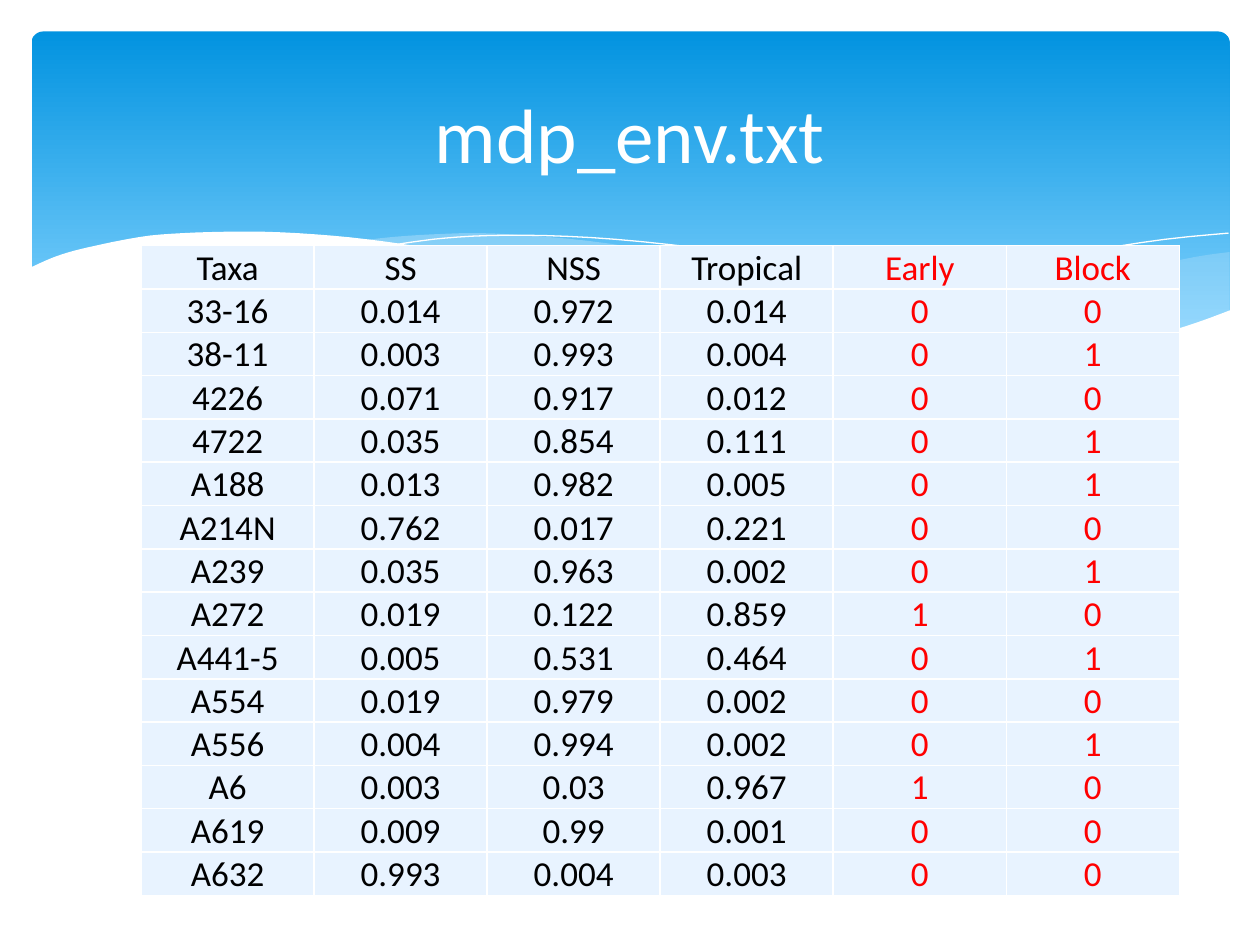
from collections import namedtuple

from lxml.etree import SubElement
from pptx import Presentation
from pptx.dml.color import RGBColor
from pptx.enum.shapes import MSO_SHAPE
from pptx.enum.text import MSO_ANCHOR, PP_ALIGN
from pptx.oxml.ns import qn
from pptx.util import Inches, Pt

Box = namedtuple("Box", "left top width height")
COLORS = {
    "white": "FFFFFF", "black": "000000", "red": "FF0000", "cell": "E8F3FF",
    "banner_top": "0293E0", "banner_bottom": "83D3FE", "wave": "C6E7FC",
}
FONT = "Calibri"
GRID_COLUMNS, GRID_ROWS = 1000, 750

RIGHT_WAVE = [
    [(976, 200), (948, 204), (906, 213), (861, 223), (805, 237), (753, 248), (706, 257), (661, 265)],
    [(661, 265), (705, 271), (757, 275), (803, 278), (854, 276), (897, 270), (935, 262), (976, 247)],
]
MIDDLE_WAVE = [
    [(893, 273), (837, 265), (775, 254), (706, 240), (629, 222), (569, 208), (514, 198),
     (465, 191), (420, 187), (380, 185), (344, 186), (313, 188), (286, 191)],
    [(286, 191), (342, 199), (404, 211), (449, 222), (530, 240), (601, 255), (665, 266),
     (722, 274), (773, 277), (818, 278), (857, 277), (893, 273)],
]
LONG_CREST = [[
    (309, 195), (328, 192), (353, 189), (387, 187), (433, 187), (489, 190), (556, 197),
    (636, 208), (727, 226), (831, 251), (907, 272),
]]
RIGHT_CREST = [[
    (613, 257), (672, 241), (748, 223), (806, 210), (866, 199), (924, 190), (975, 185),
]]
WHITE_WAVE = [
    [(977, 246), (950, 256), (920, 265), (887, 271), (850, 275), (809, 277), (761, 275),
     (708, 270), (648, 262), (579, 250), (503, 233), (447, 220), (391, 207), (340, 197),
     (292, 190), (250, 186), (211, 184), (177, 184), (146, 185), (119, 187), (95, 191),
     (76, 195), (59, 199), (46, 203), (36, 207), (23, 213)],
    [(23, 329), (977, 329)],
]

HEADERS = ["Taxa", "SS", "NSS", "Tropical", "Early", "Block"]
COVARIATES = {"Early", "Block"}
RECORDS = """
33-16 0.014 0.972 0.014 0 0
38-11 0.003 0.993 0.004 0 1
4226 0.071 0.917 0.012 0 0
4722 0.035 0.854 0.111 0 1
A188 0.013 0.982 0.005 0 1
A214N 0.762 0.017 0.221 0 0
A239 0.035 0.963 0.002 0 1
A272 0.019 0.122 0.859 1 0
A441-5 0.005 0.531 0.464 0 1
A554 0.019 0.979 0.002 0 0
A556 0.004 0.994 0.002 0 1
A6 0.003 0.03 0.967 1 0
A619 0.009 0.99 0.001 0 0
A632 0.993 0.004 0.003 0 0
"""


def color(name):
    return RGBColor.from_string(COLORS[name])


def cells_of(box, column, row, columns, rows):
    unit_x, unit_y = box.width / GRID_COLUMNS, box.height / GRID_ROWS
    return Box(round(box.left + column * unit_x), round(box.top + row * unit_y),
               round(columns * unit_x), round(rows * unit_y))


def smooth(points, steps=3):
    if len(points) < 3:
        return points
    padded = [points[0], *points, points[-1]]
    curve = []
    for a, b, c, d in zip(padded, padded[1:], padded[2:], padded[3:]):
        for step in range(steps):
            t = step / steps
            curve.append(tuple(
                (2 * q + (r - p) * t + (2 * p - 5 * q + 4 * r - s) * t ** 2
                 + (3 * q - p - 3 * r + s) * t ** 3) / 2
                for p, q, r, s in zip(a, b, c, d)))
    return curve + [points[-1]]


def add_curve(page, box, sections, fill=None, opacity=100):
    places = [cells_of(box, x, y, 0, 0)[:2] for section in sections for x, y in smooth(section)]
    builder = page.shapes.build_freeform(*places[0], scale=1.0)
    builder.add_line_segments(places[1:], close=fill is not None)
    shape = builder.convert_to_shape()
    shape.shadow.inherit = False
    if fill is None:
        shape.fill.background()
        shape.line.color.rgb = color("white")
        shape.line.width = Pt(0)
        return
    shape.line.fill.background()
    shape.fill.solid()
    shape.fill.fore_color.rgb = color(fill)
    if opacity < 100:
        tint = shape.fill._xPr.find(qn("a:solidFill"))[0]
        SubElement(tint, qn("a:alpha"), val=str(opacity * 1000))


def add_backdrop(page, box):
    banner = page.shapes.add_shape(MSO_SHAPE.ROUNDED_RECTANGLE, *cells_of(box, 25, 25, 951, 270))
    banner.adjustments[0] = 0.034
    banner.shadow.inherit = False
    banner.line.fill.background()
    banner.fill.gradient()
    banner.fill.gradient_angle = 270
    stops = zip(banner.fill.gradient_stops, ("banner_top", "banner_bottom"), (0, 0.9))
    for stop, name, position in stops:
        stop.color.rgb = color(name)
        stop.position = position
    add_curve(page, box, RIGHT_WAVE, "wave", 29)
    add_curve(page, box, MIDDLE_WAVE, "wave", 40)
    add_curve(page, box, LONG_CREST)
    add_curve(page, box, RIGHT_CREST)
    add_curve(page, box, WHITE_WAVE, "white")


def write(para, text, size, name):
    para.alignment = PP_ALIGN.CENTER
    span = para.add_run()
    span.text = text
    span.font.name = FONT
    span.font.size = Pt(size)
    span.font.color.rgb = color(name)


def add_title(page, box):
    frame = page.shapes.add_textbox(*box).text_frame
    frame.word_wrap = True
    frame.vertical_anchor = MSO_ANCHOR.MIDDLE
    write(frame.paragraphs[0], "mdp_env.txt", 44, "white")


def style_cell(cell):
    cell.margin_left = cell.margin_right = cell.margin_top = Inches(0.01)
    cell.margin_bottom = 0
    cell.vertical_anchor = MSO_ANCHOR.BOTTOM
    properties = cell._tc.get_or_add_tcPr()
    for side in ("lnL", "lnR", "lnT", "lnB"):
        border = SubElement(properties, qn(f"a:{side}"), w=str(Pt(1)))
        paint = SubElement(border, qn("a:solidFill"))
        SubElement(paint, qn("a:srgbClr"), val=COLORS["white"])
    cell.fill.solid()
    cell.fill.fore_color.rgb = color("cell")


def add_data_table(page, box, row_height):
    rows = [HEADERS] + [line.split() for line in RECORDS.strip().splitlines()]
    holder = page.shapes.add_table(len(rows), len(HEADERS), *box)
    table = holder.table
    table.first_row = table.horz_banding = False
    for row, values in zip(table.rows, rows):
        row.height = row_height
        for cell, header, value in zip(row.cells, HEADERS, values):
            style_cell(cell)
            name = "red" if header in COVARIATES else "black"
            write(cell.text_frame.paragraphs[0], value, 20, name)
    holder.height = box.height


def main():
    deck = Presentation()
    deck.slide_width, deck.slide_height = Inches(10), Inches(7.5)
    page = deck.slides.add_slide(deck.slide_layouts[6])
    whole = Box(0, 0, deck.slide_width, deck.slide_height)
    add_backdrop(page, whole)
    add_title(page, cells_of(whole, 50, 37, 900, 137))
    add_data_table(page, cells_of(whole, 112, 195, 824, 521), cells_of(whole, 0, 0, 0, 31).height)
    deck.save("out.pptx")


if __name__ == "__main__":
    main()
